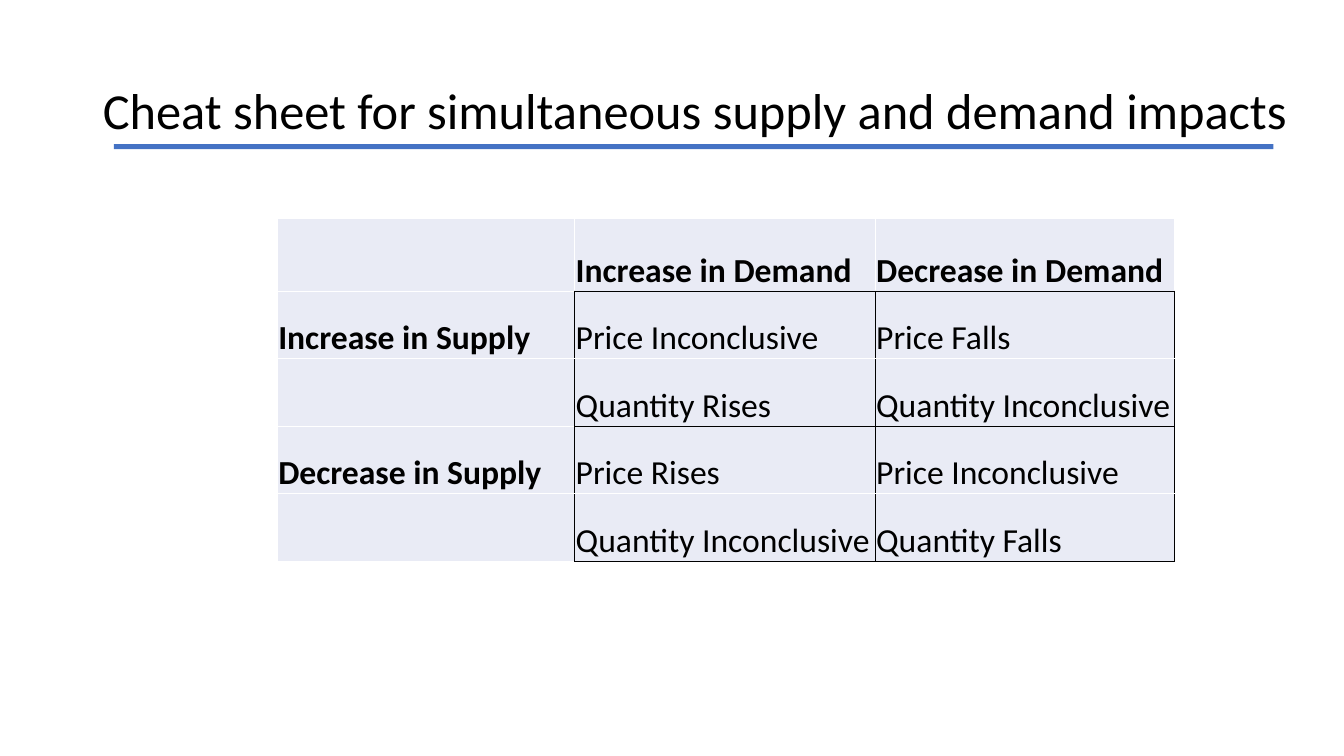
import pptx
import pptx.util
import pptx.dml.color
import pptx.enum.shapes
import pptx.enum.text
import pptx.oxml
import pptx.oxml.ns

Inches = pptx.util.Inches
Pt = pptx.util.Pt
RGBColor = pptx.dml.color.RGBColor
Anchor = pptx.enum.text.MSO_ANCHOR

BLACK = RGBColor(0x00, 0x00, 0x00)
WHITE = RGBColor(0xFF, 0xFF, 0xFF)
BLUE = RGBColor(0x44, 0x72, 0xC4)
PALE_BLUE = RGBColor(0xE9, 0xEB, 0xF5)
FONT = "Calibri"

COLUMN_WIDTHS = [2.95, 2.98, 2.97]
ROW_HEIGHTS = [0.72] + [0.67] * 4
IMPACTS = [
    ["", "Increase in Demand", "Decrease in Demand"],
    ["Increase in Supply", "Price Inconclusive", "Price Falls"],
    ["", "Quantity Rises", "Quantity Inconclusive"],
    ["Decrease in Supply", "Price Rises", "Price Inconclusive"],
    ["", "Quantity Inconclusive", "Quantity Falls"],
]


def format_paragraph(para, size, bold=False):
    para.font.name = FONT
    para.font.size = Pt(size)
    para.font.bold = bold
    para.font.color.rgb = BLACK


def add_heading(page, left, top, width, height):
    title = page.shapes.title
    title.left, title.top = Inches(left), Inches(top)
    title.width, title.height = Inches(width), Inches(height)
    frame = title.text_frame
    frame.text = "Cheat sheet for simultaneous supply and demand impacts"
    frame.word_wrap = True
    frame.auto_size = pptx.enum.text.MSO_AUTO_SIZE.NONE
    frame.vertical_anchor = Anchor.MIDDLE
    para = frame.paragraphs[0]
    para.alignment = pptx.enum.text.PP_ALIGN.LEFT
    para.line_spacing = 0.9
    format_paragraph(para, 36)

    rule = page.shapes.add_shape(
        pptx.enum.shapes.MSO_SHAPE.RECTANGLE,
        Inches(left + 0.21), Inches(top + 1.03), Inches(11.5), Inches(0.05))
    rule.shadow.inherit = False
    rule.fill.solid()
    rule.fill.fore_color.rgb = BLUE
    rule.line.fill.background()


def set_borders(cell, colors):
    properties = cell._tc.get_or_add_tcPr()
    for side, color in colors.items():
        properties.append(pptx.oxml.parse_xml(
            f'<a:ln{side} {pptx.oxml.ns.nsdecls("a")} w="{Pt(1)}">'
            f'<a:solidFill><a:srgbClr val="{color}"/></a:solidFill>'
            f'</a:ln{side}>'))


def border_colors(row, column):
    inner_row, inner_column = row > 0, column > 0
    starts_pair = row % 2 == 1
    dark = {
        "L": inner_row and inner_column,
        "R": inner_row,
        "T": inner_column and starts_pair,
        "B": inner_column and not starts_pair,
    }
    return {side: BLACK if is_dark else WHITE for side, is_dark in dark.items()}


def add_impact_table(page, left, top, width, height):
    table = page.shapes.add_table(
        len(ROW_HEIGHTS), len(COLUMN_WIDTHS),
        Inches(left), Inches(top), Inches(width), Inches(height)).table
    table.first_row = False
    table.horz_banding = False
    for column, size in zip(table.columns, COLUMN_WIDTHS):
        column.width = Inches(size)
    for row, size in zip(table.rows, ROW_HEIGHTS):
        row.height = Inches(size)
    for r, texts in enumerate(IMPACTS):
        for c, text in enumerate(texts):
            cell = table.cell(r, c)
            set_borders(cell, border_colors(r, c))
            cell.fill.solid()
            cell.fill.fore_color.rgb = PALE_BLUE
            cell.vertical_anchor = Anchor.BOTTOM
            cell.margin_left = cell.margin_right = cell.margin_top = Inches(0.01)
            cell.margin_bottom = 0
            cell.text = text
            format_paragraph(cell.text_frame.paragraphs[0], 24, r == 0 or c == 0)


def main():
    deck = pptx.Presentation()
    deck.slide_width, deck.slide_height = Inches(13.33), Inches(7.5)
    page = deck.slides.add_slide(deck.slide_layouts[5])
    add_heading(page, 0.92, 0.4, 12.17, 1.45)
    add_impact_table(page, 2.75, 2.17, sum(COLUMN_WIDTHS), sum(ROW_HEIGHTS))
    deck.save("out.pptx")


if __name__ == "__main__":
    main()
